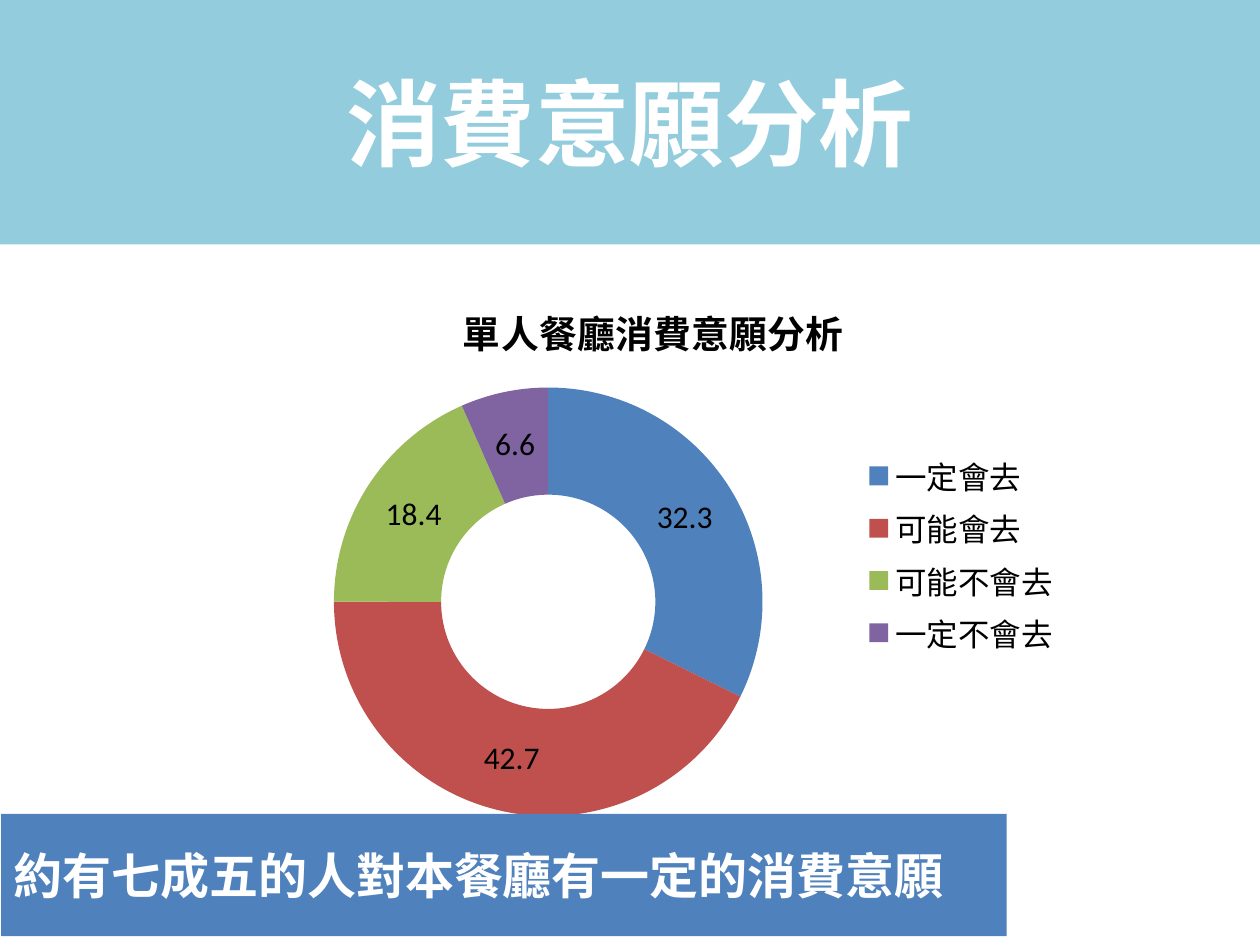
from lxml import etree
from pptx import Presentation
from pptx.chart.data import CategoryChartData
from pptx.dml.color import RGBColor
from pptx.enum.chart import XL_CHART_TYPE, XL_LEGEND_POSITION
from pptx.enum.shapes import MSO_SHAPE
from pptx.enum.text import MSO_ANCHOR, PP_ALIGN
from pptx.oxml.ns import qn
from pptx.util import Inches, Pt

DOUGHNUT = XL_CHART_TYPE.DOUGHNUT
RIGHT = XL_LEGEND_POSITION.RIGHT
RECT = MSO_SHAPE.RECTANGLE
MIDDLE = MSO_ANCHOR.MIDDLE
LEFT, CENTER = PP_ALIGN.LEFT, PP_ALIGN.CENTER

W, H = 10, 7.5
CJK, LATIN = "Noto Sans CJK SC", "Calibri"

CHART_TITLE = "單人餐廳消費意願分析"
ANSWERS = [
    ("一定會去", 32.3, "4F81BD"),
    ("可能會去", 42.7, "C0504D"),
    ("可能不會去", 18.4, "9BBB59"),
    ("一定不會去", 6.6, "8064A2"),
]
TITLE_BAND = ("消費意願分析", (0, 0, W, 1.94), "93CDDD", 54, CENTER)
SUMMARY_BAND = ("約有七成五的人對本餐廳有一定的消費意願",
                (0.01, 6.46, 7.98, 0.97), "4F81BD", 28, LEFT)
CHART_BOX = (1.85, 2.18, 6.67, 4.44)
RING_LAYOUT = {"x": 0.12, "y": 0.2, "w": 0.51, "h": 0.77}


def rgb(value):
    return RGBColor.from_string(value)


def write(tf, text, size, color="000000", bold=False, font=CJK, align=LEFT):
    p = tf.paragraphs[0]
    p.alignment = align
    r = p.add_run()
    r.text = text
    r.font.size, r.font.bold, r.font.name = Pt(size), bold, font
    r.font.color.rgb = rgb(color)
    etree.SubElement(r.font._element, qn("a:ea"), typeface=CJK)


def add_band(s, text, box, fill, size, align):
    band = s.shapes.add_shape(RECT, *map(Inches, box))
    band.shadow.inherit = False
    band.fill.solid()
    band.fill.fore_color.rgb = rgb(fill)
    band.line.fill.background()
    tf = band.text_frame
    tf.word_wrap = True
    tf.vertical_anchor = MIDDLE
    write(tf, text, size, color="FFFFFF", bold=True, align=align)


def place_plot(chart, shares):
    area = chart._chartSpace.chart.plotArea
    for old in area.findall(qn("c:layout")):
        area.remove(old)
    layout = etree.Element(qn("c:layout"))
    manual = etree.SubElement(layout, qn("c:manualLayout"))
    settings = {"layoutTarget": "inner", "xMode": "edge", "yMode": "edge", **shares}
    for name, value in settings.items():
        etree.SubElement(manual, qn(f"c:{name}"), val=str(value))
    area.insert(0, layout)


def add_ring(s):
    data = CategoryChartData()
    data.categories = [name for name, _, _ in ANSWERS]
    data.add_series(CHART_TITLE, [value for _, value, _ in ANSWERS])
    chart = s.shapes.add_chart(DOUGHNUT, *map(Inches, CHART_BOX), data).chart
    chart.font.size, chart.font.name = Pt(18), LATIN
    chart.font.color.rgb = rgb("000000")
    chart.has_title = True
    write(chart.chart_title.text_frame, CHART_TITLE, 21.6,
          bold=True, font=LATIN, align=CENTER)
    chart.chart_title.include_in_layout = False
    chart.has_legend = True
    chart.legend.position = RIGHT
    chart.legend.include_in_layout = False

    plot = chart.plots[0]
    plot.vary_by_categories = True
    plot.has_data_labels = True
    plot.data_labels.show_value = True
    plot.data_labels.show_percentage = False
    for i, (_, _, color) in enumerate(ANSWERS):
        fill = plot.series[0].points[i].format.fill
        fill.solid()
        fill.fore_color.rgb = rgb(color)
    place_plot(chart, RING_LAYOUT)


def main():
    prs = Presentation()
    prs.slide_width, prs.slide_height = Inches(W), Inches(H)
    s = prs.slides.add_slide(prs.slide_layouts[6])
    add_band(s, *TITLE_BAND)
    add_ring(s)
    add_band(s, *SUMMARY_BAND)
    prs.save("out.pptx")


if __name__ == "__main__":
    main()
